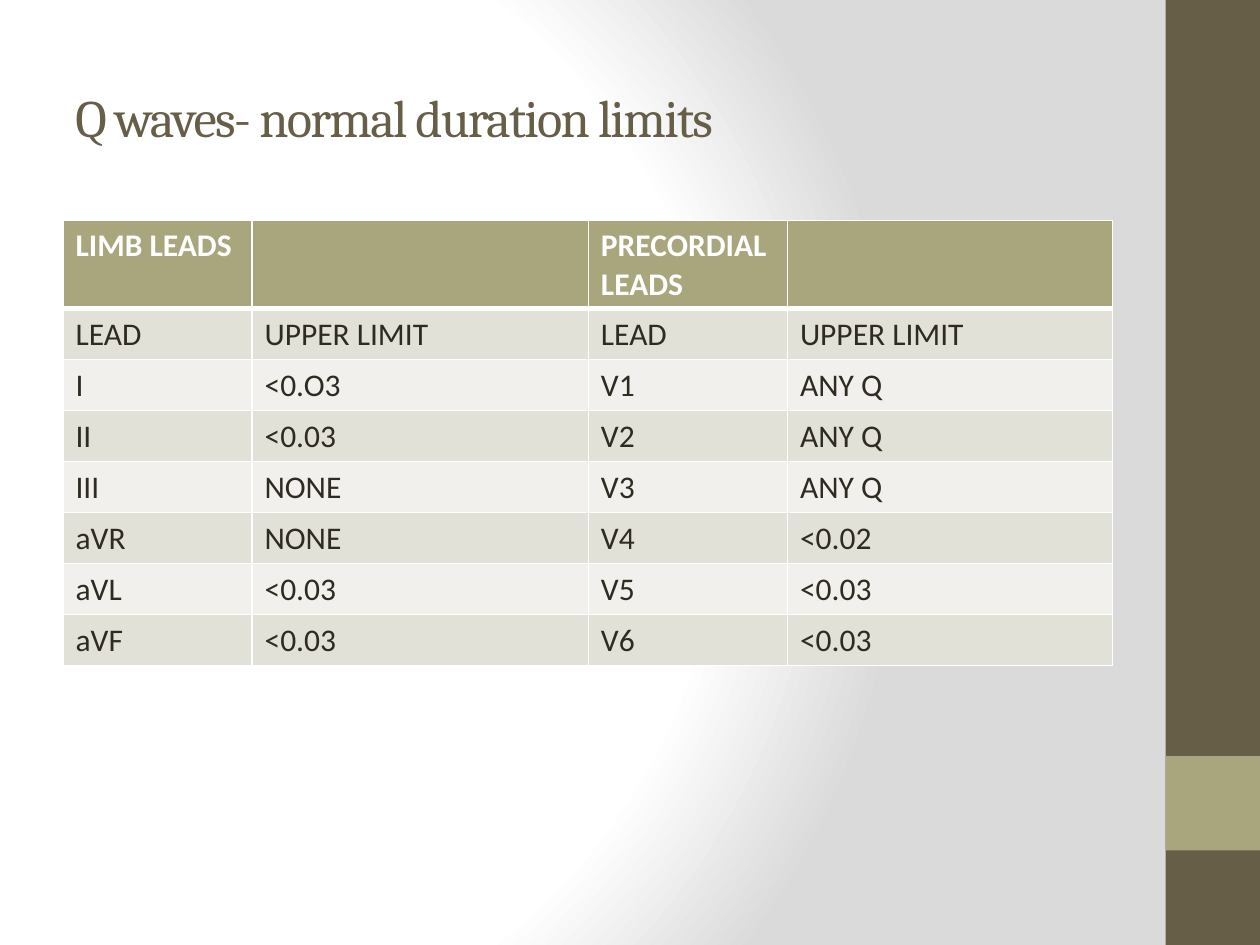
from typing import NamedTuple

from pptx import Presentation
from pptx.dml.color import RGBColor
from pptx.enum.shapes import MSO_SHAPE
from pptx.enum.text import MSO_ANCHOR
from pptx.oxml import parse_xml
from pptx.oxml.ns import nsdecls
from pptx.slide import Slide
from pptx.table import _Cell
from pptx.util import Inches, Pt

BROWN = "675E47"
OLIVE = "A9A57C"
WHITE = "FFFFFF"
DARK_TEXT = "2F2B20"
BANDS = ("E2E1D7", "F1F0EC")

COLUMN_WIDTHS = (1.5, 2.67, 1.58, 2.58)
ROWS = (
    ("LIMB LEADS", "", "PRECORDIAL LEADS", ""),
    ("LEAD", "UPPER LIMIT", "LEAD", "UPPER LIMIT"),
    ("I", "<0.O3", "V1", "ANY Q"),
    ("II", "<0.03", "V2", "ANY Q"),
    ("III", "NONE", "V3", "ANY Q"),
    ("aVR", "NONE", "V4", "<0.02"),
    ("aVL", "<0.03", "V5", "<0.03"),
    ("aVF", "<0.03", "V6", "<0.03"),
)


class Panel(NamedTuple):
    top: float
    height: float
    color: str


SIDE_PANELS = (Panel(0, 7.5, BROWN), Panel(6, 0.75, OLIVE))


def rgb(color: str) -> RGBColor:
    return RGBColor.from_string(color)


def set_background(slide: Slide) -> None:
    """Fill the slide with a radial gradient from white to grey."""
    stops = "".join(
        f'<a:gs pos="{percent * 1000}"><a:srgbClr val="{color}"/></a:gs>'
        for percent, color in ((0, WHITE), (75, WHITE), (100, "DADADA"))
    )
    background = parse_xml(
        f'<p:bg {nsdecls("p", "a")}><p:bgPr><a:gradFill rotWithShape="1">'
        f'<a:gsLst>{stops}</a:gsLst><a:path path="circle">'
        '<a:fillToRect l="20000" t="50000" r="100000" b="50000"/></a:path>'
        "</a:gradFill><a:effectLst/></p:bgPr></p:bg>"
    )
    slide._element.cSld.insert(0, background)


def add_panel(slide: Slide, panel: Panel) -> None:
    shape = slide.shapes.add_shape(
        MSO_SHAPE.RECTANGLE,
        Inches(9.25), Inches(panel.top), Inches(0.75), Inches(panel.height),
    )
    shape.shadow.inherit = False
    shape.fill.solid()
    shape.fill.fore_color.rgb = rgb(panel.color)
    shape.line.fill.background()


def add_title(slide: Slide, text: str) -> None:
    text_box = slide.shapes.add_textbox(
        Inches(0.5), Inches(0.3), Inches(8.33), Inches(1.25)
    )
    text_frame = text_box.text_frame
    text_frame.word_wrap = True
    text_frame.vertical_anchor = MSO_ANCHOR.MIDDLE
    text_frame.text = text
    font = text_frame.paragraphs[0].runs[0].font
    font.name = "Cambria"
    font.size = Pt(30)
    font.color.rgb = rgb(BROWN)
    font._element.set("spc", "-100")


def set_borders(cell: _Cell, top: float, bottom: float) -> None:
    """Draw white borders, with the top and bottom widths in points."""
    properties = cell._tc.get_or_add_tcPr()
    for side, width in (("L", 1), ("R", 1), ("T", top), ("B", bottom)):
        properties.append(parse_xml(
            f'<a:ln{side} {nsdecls("a")} w="{Pt(width)}"><a:solidFill>'
            f'<a:srgbClr val="{WHITE}"/></a:solidFill></a:ln{side}>'
        ))


def format_cell(cell: _Cell, text: str, row_index: int) -> None:
    is_header = row_index == 0
    set_borders(cell, 3 if row_index == 1 else 1, 3 if is_header else 1)
    cell.fill.solid()
    cell.fill.fore_color.rgb = rgb(OLIVE if is_header else BANDS[(row_index - 1) % 2])
    cell.text_frame.text = text
    for run in cell.text_frame.paragraphs[0].runs:
        run.font.name = "Calibri"
        run.font.size = Pt(18)
        run.font.bold = is_header
        run.font.color.rgb = rgb(WHITE if is_header else DARK_TEXT)


def add_limits_table(slide: Slide) -> None:
    table = slide.shapes.add_table(
        len(ROWS), len(COLUMN_WIDTHS),
        Inches(0.5), Inches(1.75), Inches(sum(COLUMN_WIDTHS)), Inches(3.24),
    ).table
    for column, width in zip(table.columns, COLUMN_WIDTHS):
        column.width = Inches(width)
    for row_index, row in enumerate(ROWS):
        for column_index, text in enumerate(row):
            format_cell(table.cell(row_index, column_index), text, row_index)


def main() -> None:
    presentation = Presentation()
    presentation.slide_width = Inches(10)
    presentation.slide_height = Inches(7.5)
    slide = presentation.slides.add_slide(presentation.slide_layouts[6])
    set_background(slide)
    for panel in SIDE_PANELS:
        add_panel(slide, panel)
    add_title(slide, "Q waves- normal duration limits")
    add_limits_table(slide)
    presentation.save("out.pptx")


if __name__ == "__main__":
    main()
